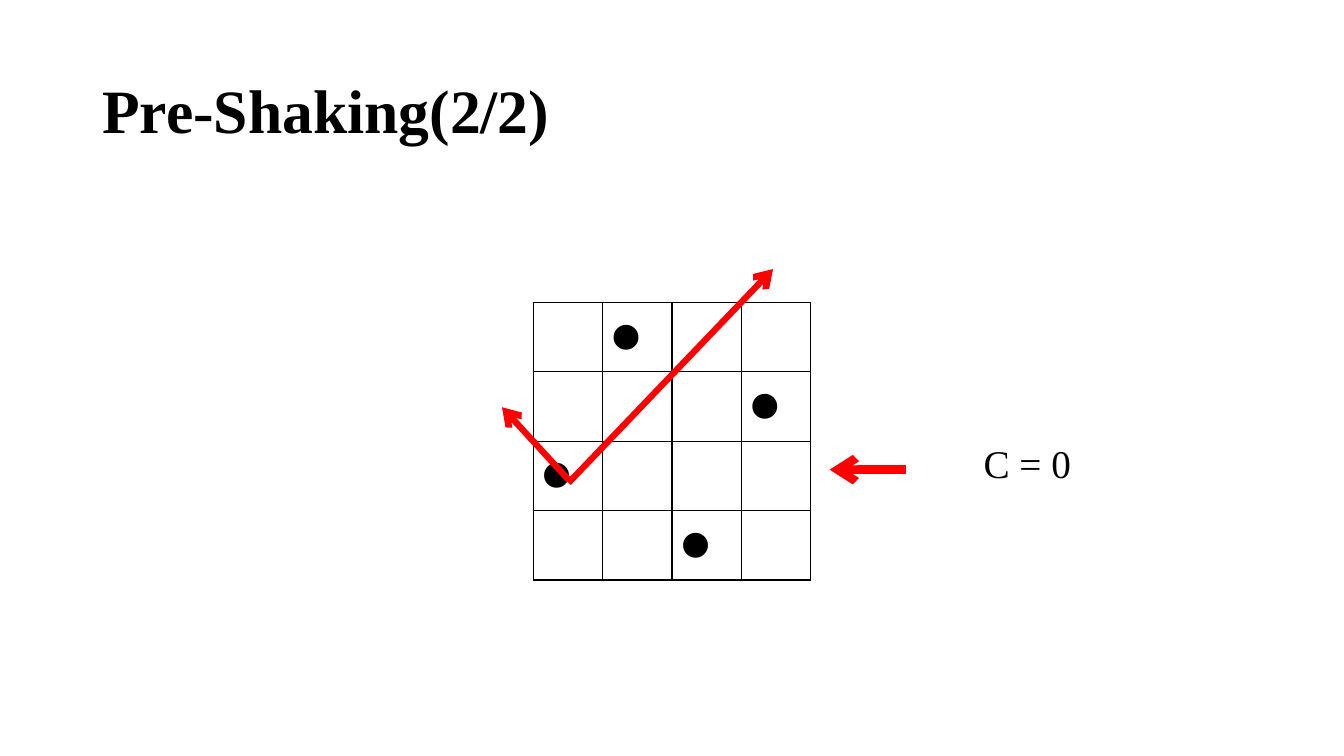
from pptx import Presentation
from pptx.util import Pt
from pptx.dml.color import RGBColor
from pptx.enum import shapes, text
from pptx.oxml.ns import qn
from lxml import etree

# Content
TITLE = "Pre-Shaking(2/2)"
NOTE = "C = 0"
QUEEN = "⚫"
QUEEN_COLUMNS = [1, 3, 0, 2]  # column of the queen in each row
BOARD_LEFT, BOARD_TOP, CELL = 380.8, 216, 49.6
BLACK, RED = "000000", "FF0000"
SERIF = "Times New Roman"
# start, end (arrowhead), width
ARROWS = [
    ((647.3, 335.5), (592.6, 335.5), 6),
    ((406.1, 344.9), (552.2, 192.2), 4.5),
    ((406.1, 342.7), (358.6, 290.9), 4.5),
]


def color(value):
    return RGBColor.from_string(value)


def add_run(p, words, font, size, bold=False):
    r = p.add_run()
    r.text = words
    r.font.name, r.font.size, r.font.bold = font, Pt(size), bold
    r.font.color.rgb = color(BLACK)


def add_text(s, box, words, size, bold=False, before=0, anchor=text.MSO_ANCHOR.TOP):
    tf = s.shapes.add_textbox(*map(Pt, box)).text_frame
    tf.word_wrap = True
    tf.vertical_anchor = anchor
    p = tf.paragraphs[0]
    p.line_spacing, p.space_before = 0.9, Pt(before)
    add_run(p, words, SERIF, size, bold)


def set_borders(cell):
    tcPr = cell._tc.get_or_add_tcPr()
    for i, side in enumerate(("a:lnL", "a:lnR", "a:lnT", "a:lnB")):
        ln = etree.Element(qn(side), w=str(Pt(1)))
        fill = etree.SubElement(ln, qn("a:solidFill"))
        etree.SubElement(fill, qn("a:srgbClr"), val=BLACK)
        tcPr.insert(i, ln)


def add_board(s):
    n = len(QUEEN_COLUMNS)
    side = Pt(CELL * n)
    table = s.shapes.add_table(n, n, Pt(BOARD_LEFT), Pt(BOARD_TOP), side, side).table
    table.first_row = table.horz_banding = False
    for row, queen_column in enumerate(QUEEN_COLUMNS):
        table.rows[row].height = table.columns[row].width = Pt(CELL)
        for column in range(n):
            cell = table.cell(row, column)
            cell.fill.background()
            set_borders(cell)
            if column == queen_column:
                add_run(cell.text_frame.paragraphs[0], QUEEN, "Calibri", 32)


def add_arrow(s, start, end, width):
    line = s.shapes.add_connector(shapes.MSO_CONNECTOR.STRAIGHT, *map(Pt, start + end))
    line.line.color.rgb = color(RED)
    line.line.width = Pt(width)
    etree.SubElement(line.line._get_or_add_ln(), qn("a:tailEnd"), type="arrow")
    etree.SubElement(line._element.spPr, qn("a:effectLst"))


def main():
    prs = Presentation()
    prs.slide_width, prs.slide_height = Pt(960), Pt(540)
    s = prs.slides.add_slide(prs.slide_layouts[6])

    # Board, heading and note
    add_board(s)
    add_text(s, (66, 28.75, 828, 104.4), TITLE, 44, bold=True,
             anchor=text.MSO_ANCHOR.MIDDLE)
    add_text(s, (695.5, 313.9, 105.1, 45.4), NOTE, 28, before=10)

    # Diagonals of the third queen and pointer to its row
    for start, end, width in ARROWS:
        add_arrow(s, start, end, width)

    prs.save("out.pptx")


if __name__ == "__main__":
    main()
